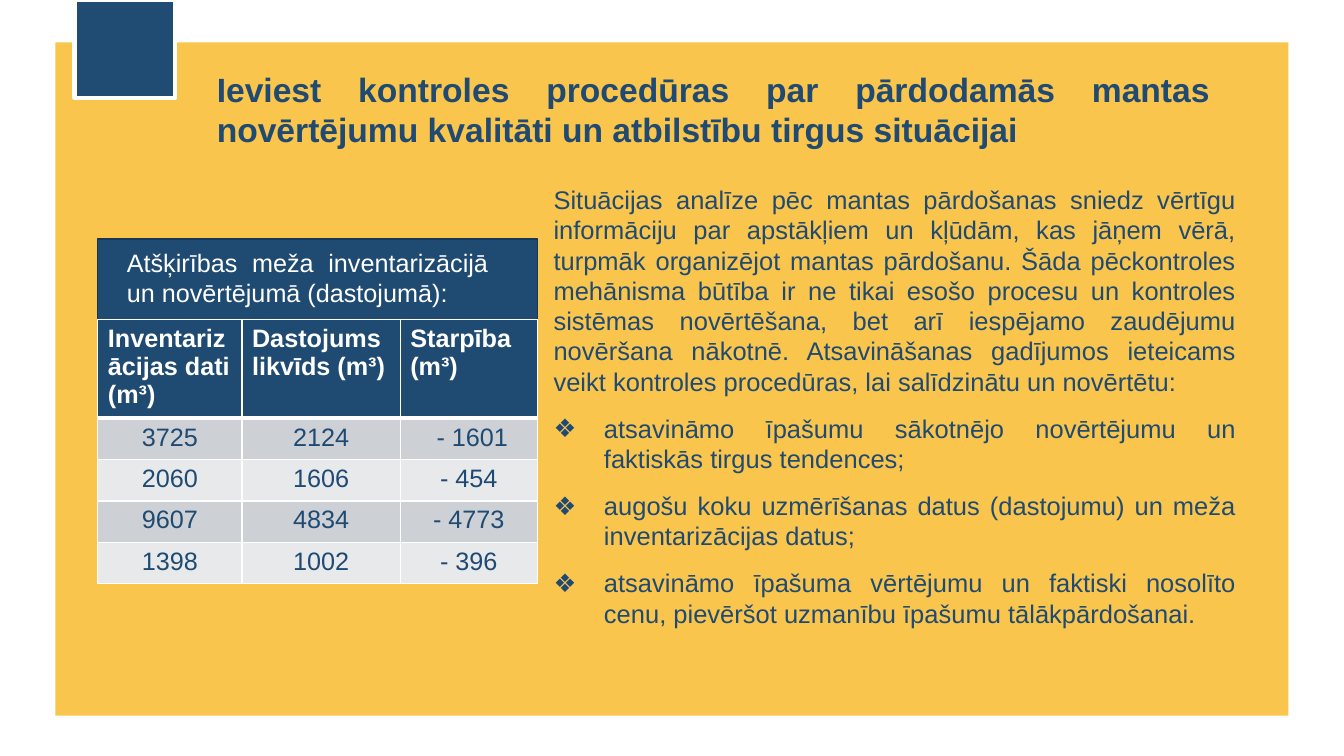
from lxml.etree import SubElement
from pptx import Presentation
from pptx.dml.color import RGBColor
from pptx.enum.shapes import MSO_SHAPE
from pptx.enum.text import MSO_ANCHOR, MSO_AUTO_SIZE, PP_ALIGN
from pptx.oxml.ns import qn
from pptx.util import Inches, Pt

TITLE = "Ieviest kontroles procedūras par pārdodamās mantas novērtējumu kvalitāti un atbilstību tirgus situācijai"
INTRO = (
    "Situācijas analīze pēc mantas pārdošanas sniedz vērtīgu informāciju par apstākļiem un kļūdām, "
    "kas jāņem vērā, turpmāk organizējot mantas pārdošanu. Šāda pēckontroles mehānisma būtība ir ne "
    "tikai esošo procesu un kontroles sistēmas novērtēšana, bet arī iespējamo zaudējumu novēršana "
    "nākotnē. Atsavināšanas gadījumos ieteicams veikt kontroles procedūras, lai salīdzinātu un novērtētu:"
)
BULLETS = [
    "atsavināmo īpašumu sākotnējo novērtējumu un faktiskās tirgus tendences;",
    "augošu koku uzmērīšanas datus (dastojumu) un meža inventarizācijas datus;",
    "atsavināmo īpašuma vērtējumu un faktiski nosolīto cenu, pievēršot uzmanību īpašumu tālākpārdošanai.",
]
CAPTION = "Atšķirības meža inventarizācijā un novērtējumā (dastojumā):"
ROWS = [
    ["Inventarizācijas dati (m³)", "Dastojums likvīds (m³)", "Starpība (m³)"],
    ["3725", "2124", " - 1601"],
    ["2060", "1606", "- 454"],
    ["9607", "4834", "- 4773"],
    ["1398", "1002", "- 396"],
]


def rgb(value):
    """Turn a hex string into a colour."""
    return RGBColor.from_string(value)


class SlideBuilder:
    """Hold the style and the current slide."""

    font = "Arial"
    navy = "1F4A72"
    ink = "204A72"
    white = "FFFFFF"
    bands = ["E8E9EB", "CDD0D5"]

    def __init__(self, prs):
        """Add a title and content slide."""
        self.s = prs.slides.add_slide(prs.slide_layouts[1])

    def run(self, p, text, size, color, bold=False):
        """Add one formatted run to a paragraph."""
        r = p.add_run()
        r.text = text
        r.font.name = self.font
        r.font.size = Pt(size)
        r.font.bold = bold
        r.font.color.rgb = rgb(color)

    def box(self, place, fill, line=None, width=1):
        """Draw a filled rectangle."""
        sp = self.s.shapes.add_shape(MSO_SHAPE.RECTANGLE, *map(Inches, place))
        sp.shadow.inherit = False
        sp.fill.solid()
        sp.fill.fore_color.rgb = rgb(fill)
        if line:
            sp.line.color.rgb = rgb(line)
            sp.line.width = Pt(width)
        else:
            sp.line.fill.background()

    def frame(self, sp, place):
        """Place a text shape in front and return its text frame."""
        sp.left, sp.top, sp.width, sp.height = map(Inches, place)
        sp.element.getparent().append(sp.element)
        tf = sp.text_frame
        tf.word_wrap = True
        tf.auto_size = MSO_AUTO_SIZE.NONE
        tf.vertical_anchor = MSO_ANCHOR.TOP
        return tf

    def title(self, place, text):
        """Fill the title placeholder."""
        p = self.frame(self.s.shapes.title, place).paragraphs[0]
        p.alignment = PP_ALIGN.JUSTIFY
        self.run(p, text, 24, self.ink, True)

    def body(self, place, intro, bullets):
        """Fill the body placeholder with an introduction and a list."""
        tf = self.frame(self.s.placeholders[1], place)
        for i, text in enumerate([intro, *bullets]):
            p = tf.add_paragraph() if i else tf.paragraphs[0]
            p.alignment = PP_ALIGN.JUSTIFY
            p.line_spacing = 0.99
            p.space_before = Pt(6 if i else 0)
            p.space_after = Pt(6)
            pPr = p._p.get_or_add_pPr()
            indent = Inches(0.5 if i else 0)
            pPr.set("marL", str(indent))
            pPr.set("indent", str(-indent))
            if i:
                SubElement(pPr, qn("a:buChar"), char="❖")
            else:
                SubElement(pPr, qn("a:buNone"))
            self.run(p, text, 18.2, self.ink)

    def caption(self, place, text):
        """Add a white justified text box."""
        sp = self.s.shapes.add_textbox(*map(Inches, place))
        p = self.frame(sp, place).paragraphs[0]
        p.alignment = PP_ALIGN.JUSTIFY
        self.run(p, text, 18, self.white)

    def borders(self, cell, top, bottom):
        """Give a cell white borders."""
        tcPr = cell._tc.get_or_add_tcPr()
        for side, width in (("L", 1), ("R", 1), ("T", top), ("B", bottom)):
            ln = SubElement(tcPr, qn(f"a:ln{side}"), w=str(Pt(width)))
            fill = SubElement(ln, qn("a:solidFill"))
            SubElement(fill, qn("a:srgbClr"), val=self.white)

    def table(self, place, rows, widths, heights):
        """Add a table with a dark header and banded rows."""
        shape = self.s.shapes.add_table(len(rows), len(widths), *map(Inches, place))
        table = shape.table
        for column, width in zip(table.columns, widths):
            column.width = Inches(width)
        for i, values in enumerate(rows):
            table.rows[i].height = Inches(heights[i])
            for j, text in enumerate(values):
                cell = table.cell(i, j)
                self.borders(cell, 3 if i == 1 else 1, 1 if i else 3)
                cell.fill.solid()
                cell.fill.fore_color.rgb = rgb(self.bands[i % 2] if i else self.navy)
                p = cell.text_frame.paragraphs[0]
                p.alignment = PP_ALIGN.CENTER if i else PP_ALIGN.LEFT
                self.run(p, text, 18, self.navy if i else self.white, i == 0)


def main():
    """Build and save the slide."""
    prs = Presentation()
    prs.slide_width, prs.slide_height = Inches(13.33), Inches(7.5)
    b = SlideBuilder(prs)
    b.box((0.55, 0.42, 12.23, 6.68), "F9C54C")
    b.box((0.74, 0, 1, 0.97), "204B72", b.white, 3)
    b.title((2.05, 0.63, 10.05, 0.91), TITLE)
    b.body((5.39, 1.79, 6.97, 4.89), INTRO, BULLETS)
    b.box((0.97, 2.37, 4.36, 0.8), b.navy, "173754")
    b.caption((1.16, 2.4, 3.78, 1.01), CAPTION)
    b.table((0.97, 3.17, 4.36, 2.62), ROWS, [1.43, 1.57, 1.36], [0.98] + [0.41] * 4)
    prs.save("out.pptx")


if __name__ == "__main__":
    main()
